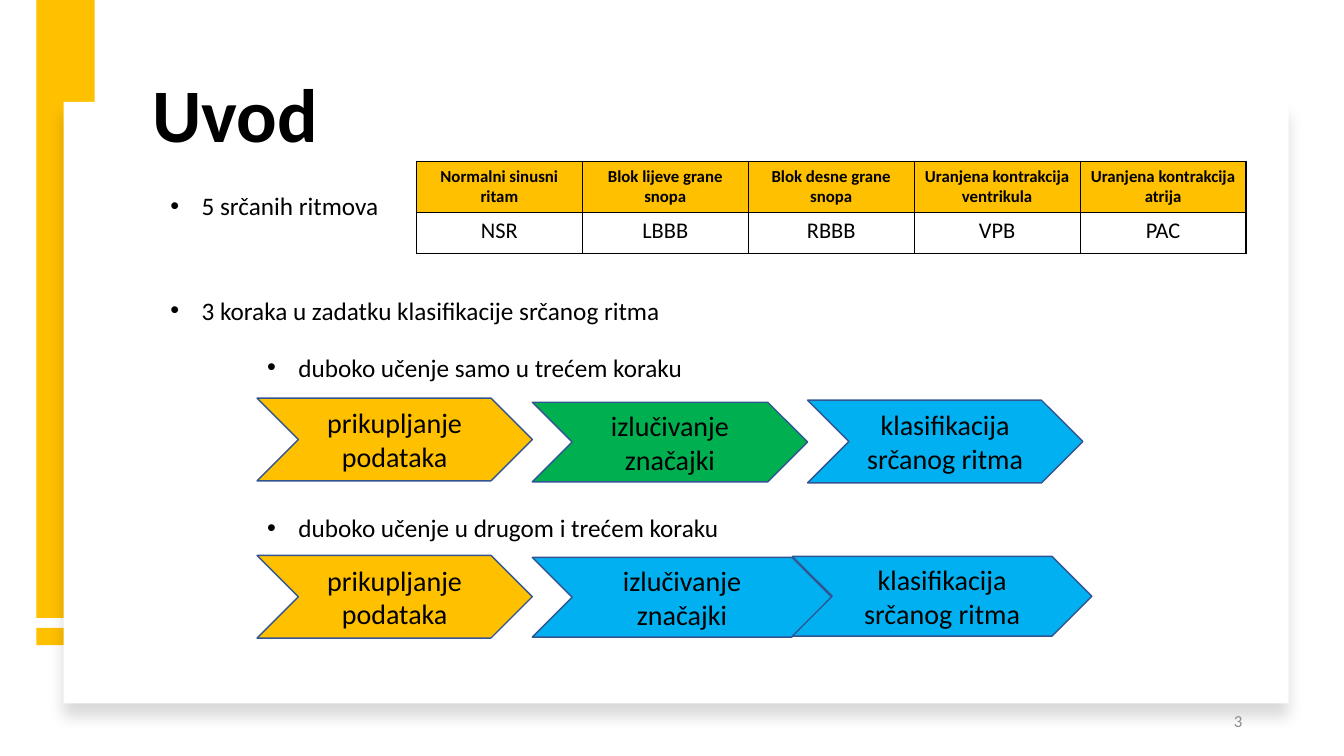
from dataclasses import dataclass

from lxml import etree
from pptx import Presentation
from pptx import util as u
from pptx.dml.color import RGBColor
from pptx.enum import shapes, text
from pptx.oxml import ns

# Content
TITLE = "Uvod"
PAGE = "3"
# text, indent level, space before in points
POINTS = [
    ("5 srčanih ritmova", 0, 0),
    ("3 koraka u zadatku klasifikacije srčanog ritma", 0, 53),
    ("duboko učenje samo u trećem koraku", 1, 19),
    ("duboko učenje u drugom i trećem koraku", 1, 93.2),
]
RHYTHMS = [
    ("Normalni sinusni ritam", "NSR"),
    ("Blok lijeve grane snopa", "LBBB"),
    ("Blok desne grane snopa", "RBBB"),
    ("Uranjena kontrakcija ventrikula", "VPB"),
    ("Uranjena kontrakcija atrija", "PAC"),
]
STEPS = ["prikupljanje podataka", "izlučivanje značajki", "klasifikacija srčanog ritma"]


@dataclass(frozen=True)
class Theme:
    font: str = "Calibri"
    ink: str = "000000"
    paper: str = "FFFFFF"
    gold: str = "FFC000"
    green: str = "00B050"
    blue: str = "00B0F0"
    outline: str = "325491"
    muted: str = "8C8C8C"
    title: int = 54
    step: int = 20
    point: int = 18
    code: int = 16
    small: int = 12


T = Theme()

# Layout in inches: left, top, width, height
WIDTH, HEIGHT = 13.33, 7.5
BAND_LEFT, BAND_WIDTH = 0.36, 0.58
CARD = (0.63, 1.01, 12.15, 5.97)
TITLE_BOX = (1.41, 0.15, 10.77, 1.48)
POINTS_BOX = (1.59, 1.84, 7, 3.65)
TABLE_BOX = (4.13, 1.6, 8.23, 0.91)
TABLE_ROWS = (0.5, 0.41)
PAGE_BOX = (9.42, 6.95, 3, 0.4)
HANGING, LEVEL_STEP = 0.31, 0.96
FLOW_LEFT, STEP_WIDTH, WIDE_STEP = 2.55, 2.73, 2.97
SECOND_LEFT = FLOW_LEFT + STEP_WIDTH
# each step: left, top, width, height, fill
FLOWS = [
    [(FLOW_LEFT, 3.95, STEP_WIDTH, 0.82, T.gold),
     (SECOND_LEFT, 3.99, STEP_WIDTH, 0.79, T.green),
     (SECOND_LEFT + STEP_WIDTH, 3.97, STEP_WIDTH, 0.82, T.blue)],
    [(FLOW_LEFT, 5.51, STEP_WIDTH, 0.82, T.gold),
     (SECOND_LEFT, 5.53, WIDE_STEP, 0.79, T.blue),
     (7.86, 5.52, WIDE_STEP, 0.79, T.blue)],
]


def inches(box):
    return [u.Inches(length) for length in box]


def paint(fill, color):
    fill.solid()
    fill.fore_color.rgb = RGBColor.from_string(color)


def write(paragraph, words, size, color=T.ink, bold=False, align=text.PP_ALIGN.LEFT):
    paragraph.alignment = align
    run = paragraph.add_run()
    run.text = words
    font = run.font
    font.name, font.size, font.bold = T.font, u.Pt(size), bold
    font.color.rgb = RGBColor.from_string(color)


def add_block(slide, kind, box, color):
    block = slide.shapes.add_shape(kind, *inches(box))
    block.shadow.inherit = False
    paint(block.fill, color)
    block.line.fill.background()
    return block


def place(placeholder, box, anchor):
    placeholder.left, placeholder.top, placeholder.width, placeholder.height = inches(box)
    frame = placeholder.text_frame
    frame.auto_size = text.MSO_AUTO_SIZE.NONE
    frame.word_wrap = True
    frame.vertical_anchor = anchor
    return frame


def element(parent, tag, **attributes):
    return etree.SubElement(parent, ns.qn(tag), {k: str(v) for k, v in attributes.items()})


def add_backdrop(slide):
    rect = shapes.MSO_SHAPE.RECTANGLE
    bands = [add_block(slide, rect, (BAND_LEFT, top, BAND_WIDTH, height), T.gold)
             for top, height in ((6.23, 0.17), (0, 6.13))]
    card = add_block(slide, rect, CARD, T.paper)
    effects = card._element.spPr.find(ns.qn("a:effectLst"))
    shadow = element(effects, "a:outerShdw", blurRad=u.Pt(11), dist=u.Pt(10),
                     dir=90 * 60000, algn="t", rotWithShape=0)
    element(element(shadow, "a:srgbClr", val=T.ink), "a:alpha", val=15000)
    # Send behind the placeholders
    for depth, part in enumerate([*bands, card], start=2):
        slide.shapes._spTree.insert(depth, part._element)


def add_points(placeholder):
    frame = place(placeholder, POINTS_BOX, text.MSO_ANCHOR.TOP)
    for i, (words, level, gap) in enumerate(POINTS):
        point = frame.add_paragraph() if i else frame.paragraphs[0]
        point.level = level
        point.line_spacing = 1.0
        point.space_before, point.space_after = u.Pt(gap), u.Pt(0)
        write(point, words, T.point)
        props = point._p.get_or_add_pPr()
        props.set("marL", str(u.Inches(HANGING + level * LEVEL_STEP)))
        props.set("indent", str(-u.Inches(HANGING)))
        element(props, "a:buFont", typeface="Arial")
        element(props, "a:buChar", char="•")


def add_rhythms(slide):
    table = slide.shapes.add_table(2, len(RHYTHMS), *inches(TABLE_BOX)).table
    for row, height in zip(table.rows, TABLE_ROWS):
        row.height = u.Inches(height)
    styles = ((T.small, True, T.gold), (T.code, False, T.paper))
    for c, rhythm in enumerate(RHYTHMS):
        table.columns[c].width = u.Inches(TABLE_BOX[2] / len(RHYTHMS))
        for r, (words, (size, bold, color)) in enumerate(zip(rhythm, styles)):
            cell = table.cell(r, c)
            write(cell.text_frame.paragraphs[0], words, size, bold=bold,
                  align=text.PP_ALIGN.CENTER)
            props = cell._tc.get_or_add_tcPr()
            for side in "LRTB":
                border = element(props, f"a:ln{side}", w=u.Pt(1))
                element(element(border, "a:solidFill"), "a:srgbClr", val=T.ink)
            paint(cell.fill, color)


def add_flow(slide, flow):
    for words, (*box, color) in zip(STEPS, flow):
        step = add_block(slide, shapes.MSO_SHAPE.CHEVRON, box, color)
        paint(step.line.fill, T.outline)
        step.line.width = u.Pt(1)
        step.text_frame.word_wrap = True
        step.text_frame.vertical_anchor = text.MSO_ANCHOR.MIDDLE
        write(step.text_frame.paragraphs[0], words, T.step, align=text.PP_ALIGN.CENTER)


def main():
    deck = Presentation()
    deck.slide_width, deck.slide_height = inches((WIDTH, HEIGHT))
    slide = deck.slides.add_slide(deck.slide_layouts[1])
    add_backdrop(slide)

    # Title and list
    heading = place(slide.shapes.title, TITLE_BOX, text.MSO_ANCHOR.BOTTOM).paragraphs[0]
    heading.line_spacing = 0.9
    write(heading, TITLE, T.title, bold=True)
    add_points(slide.placeholders[1])

    # Table and process rows
    add_rhythms(slide)
    for flow in FLOWS:
        add_flow(slide, flow)

    # Page number
    page = slide.shapes.add_textbox(*inches(PAGE_BOX)).text_frame
    page.word_wrap = True
    page.vertical_anchor = text.MSO_ANCHOR.MIDDLE
    write(page.paragraphs[0], PAGE, T.small, T.muted, align=text.PP_ALIGN.RIGHT)

    deck.save("out.pptx")


if __name__ == "__main__":
    main()
